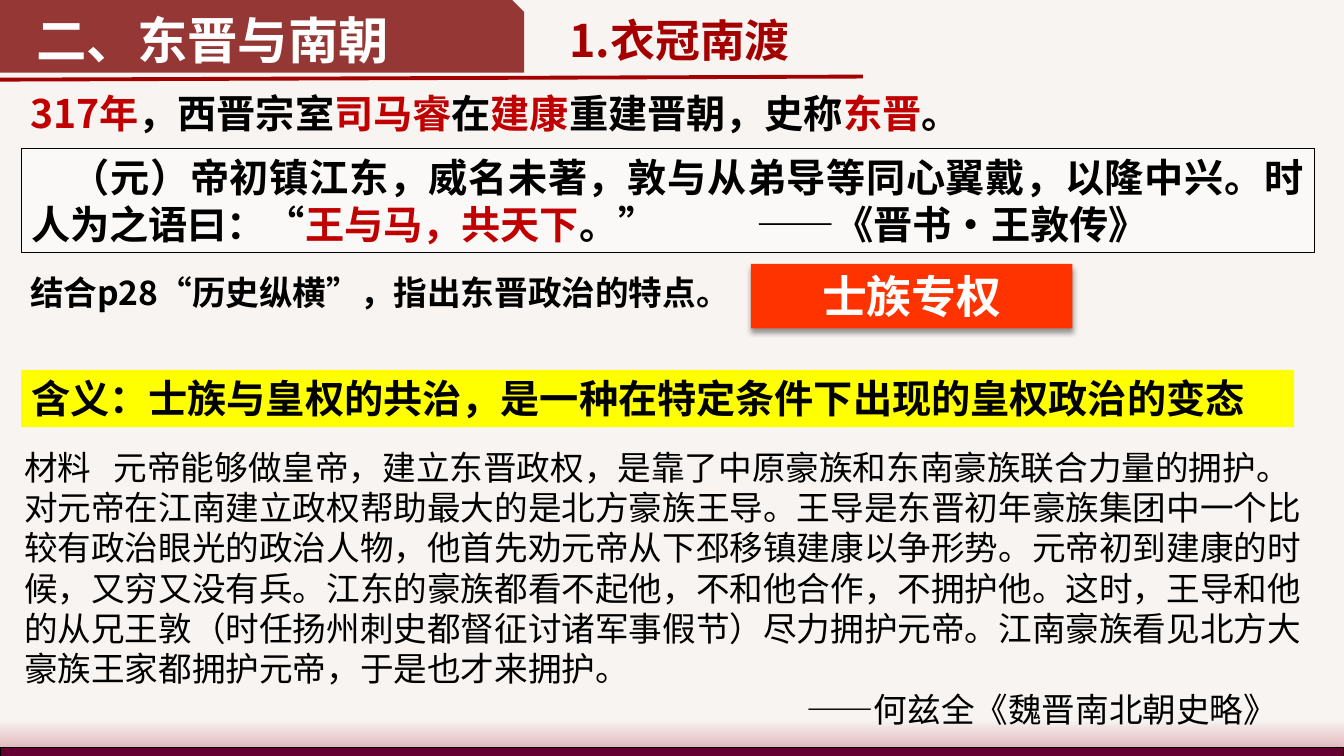
from lxml.etree import SubElement
from pptx import Presentation
from pptx.dml.color import RGBColor
from pptx.enum.shapes import MSO_CONNECTOR, MSO_SHAPE
from pptx.enum.text import MSO_ANCHOR, PP_ALIGN
from pptx.oxml.ns import qn
from pptx.util import Pt

COLORS = {
    "paper": "F8F4F1", "plum": "660033", "brick": "953735", "crimson": "A40000",
    "red": "C00000", "orange": "FF3300", "yellow": "FFFF00", "rose": "E0B8BC",
    "white": "FFFFFF", "black": "000000",
}
SANS = "Noto Sans CJK SC"
BODY = "Calibri"


def rgb(name):
    return RGBColor.from_string(COLORS[name])


def add_child(parent, tag, **attributes):
    return SubElement(parent, qn(tag), {key: str(value) for key, value in attributes.items()})


def write_text(box, paragraphs, size=28, color="black", bold=True, font=SANS,
               align=PP_ALIGN.LEFT, left=7.2, top=3.6, wrap=True,
               indents=None, tabs=()):
    frame = box.text_frame
    frame.word_wrap = wrap
    frame.vertical_anchor = MSO_ANCHOR.TOP
    frame.margin_left, frame.margin_right = Pt(left), Pt(7.2)
    frame.margin_top, frame.margin_bottom = Pt(top), Pt(0)
    for index, pieces in enumerate(paragraphs):
        para = frame.add_paragraph() if index else frame.paragraphs[0]
        para.alignment = align
        para.line_spacing = Pt(1.2 * size)
        para.space_before = para.space_after = Pt(0)
        properties = para._p.get_or_add_pPr()
        if indents and indents[index]:
            properties.set("marL", str(Pt(indents[index])))
        elif tabs:
            stops = add_child(properties, "a:tabLst")
            for position in tabs:
                add_child(stops, "a:tab", pos=Pt(position), algn="l")
        for text, tone in pieces:
            span = para.add_run()
            span.text = text
            span.font.size = Pt(size)
            span.font.bold = bold
            span.font.name = font
            span.font.color.rgb = rgb(tone or color)
            add_child(span._r.get_or_add_rPr(), "a:ea", typeface=SANS)


def add_block(page, bounds, fill, line=None, kind=MSO_SHAPE.RECTANGLE, opacity=None):
    block = page.shapes.add_shape(kind, *map(Pt, bounds))
    block.shadow.inherit = False
    block.fill.solid()
    block.fill.fore_color.rgb = rgb(fill)
    if opacity:
        tone = block._element.spPr.find(qn("a:solidFill"))[0]
        add_child(tone, "a:alpha", val=opacity * 1000)
    if line:
        block.line.color.rgb = rgb(line)
        block.line.width = Pt(0.75)
    else:
        block.line.fill.background()
    return block


def add_glow(page, bounds):
    glow = add_block(page, bounds, "paper")
    glow.fill.gradient()
    glow.fill.gradient_angle = 270
    for stop, name in zip(glow.fill.gradient_stops, ("paper", "rose")):
        stop.color.rgb = rgb(name)


def add_drop_shadow(block):
    effects = block._element.spPr.find(qn("a:effectLst"))
    shadow = add_child(effects, "a:outerShdw", blurRad=Pt(4), dist=Pt(3),
                       dir=5400000, rotWithShape=0)
    tone = add_child(shadow, "a:srgbClr", val=COLORS["black"])
    add_child(tone, "a:alpha", val=40000)


def add_rule(page, start, end):
    rule = page.shapes.add_connector(MSO_CONNECTOR.STRAIGHT, *map(Pt, start + end))
    rule.line.color.rgb = rgb("crimson")
    rule.line.width = Pt(2.75)
    add_child(rule._element.spPr, "a:effectLst")


def add_words(page, bounds, paragraphs, **style):
    box = page.shapes.add_textbox(*map(Pt, bounds))
    write_text(box, paragraphs, **style)


def add_title(page, bounds, text, **style):
    title = page.shapes.title
    title.left, title.top, title.width, title.height = map(Pt, bounds)
    write_text(title, [[(text, None)]], **style)


def main():
    deck = Presentation()
    deck.slide_width, deck.slide_height = Pt(960), Pt(540)
    page = deck.slides.add_slide(deck.slide_layouts[5])
    page.background.fill.solid()
    page.background.fill.fore_color.rgb = rgb("paper")

    add_glow(page, (0, 514, 960, 21))
    add_block(page, (0, 534.2, 960, 6.5), "plum", line="black")
    banner = add_block(page, (0, 0, 374.4, 51.8), "brick",
                       kind=MSO_SHAPE.SNIP_1_RECTANGLE)
    write_text(banner, [[("二、东晋与南朝", None)]], size=36, color="white",
               left=26, top=2.4)
    add_rule(page, (0, 56.9), (616.3, 54.7))
    add_title(page, (399.6, 5.8, 181.4, 46.1), "1.衣冠南渡", size=32,
              color="crimson", wrap=False)

    add_words(page, (14.4, 60.5, 663.1, 41), [[
        ("317年", "red"), ("，西晋宗室", None), ("司马睿", "red"), ("在", None),
        ("建康", "red"), ("重建晋朝，史称", None), ("东晋", "red"), ("。", None),
    ]])
    quote = add_block(page, (15.1, 105.8, 923.8, 74.9), "white", line="black", opacity=48)
    write_text(quote, [[
        ("\t（元）帝初镇江东，威名未著，敦与从弟导等同心翼戴，以隆中兴。时人为之语曰：“", None),
        ("王与马，共天下", "red"), ("。”\t——《晋书·王敦传》", None),
    ]], align=PP_ALIGN.JUSTIFY, tabs=(28, 518))
    add_words(page, (14.4, 190.8, 663.1, 36),
              [[("结合p28“历史纵横”，指出东晋政治的特点。", None)]], size=24)
    answer = add_block(page, (536.4, 188.6, 229.7, 46.1), "orange")
    add_drop_shadow(answer)
    write_text(answer, [[("士族专权", None)]], size=32, color="white",
               align=PP_ALIGN.CENTER)
    meaning = add_block(page, (15.1, 264.2, 909.4, 41), "yellow")
    write_text(meaning, [[
        ("含义：士族与皇权的共治，是一种在特定条件下出现的皇权政治的变态", None),
    ]], font=BODY)

    material = (
        "材料\t元帝能够做皇帝，建立东晋政权，是靠了中原豪族和东南豪族联合力量的拥护。"
        "对元帝在江南建立政权帮助最大的是北方豪族王导。王导是东晋初年豪族集团中一个比较有政治眼光的政治人物，"
        "他首先劝元帝从下邳移镇建康以争形势。元帝初到建康的时候，又穷又没有兵。"
        "江东的豪族都看不起他，不和他合作，不拥护他。这时，王导和他的从兄王敦"
        "（时任扬州刺史都督征讨诸军事假节）尽力拥护元帝。"
        "江南豪族看见北方大豪族王家都拥护元帝，于是也才来拥护。"
    )
    add_words(page, (10.1, 315.4, 939.6, 211),
              [[(material, None)], [("——何兹全《魏晋南北朝史略》", None)]],
              size=24, bold=False, font=BODY, indents=(0, 559), tabs=(64,))
    deck.save("out.pptx")


if __name__ == "__main__":
    main()
